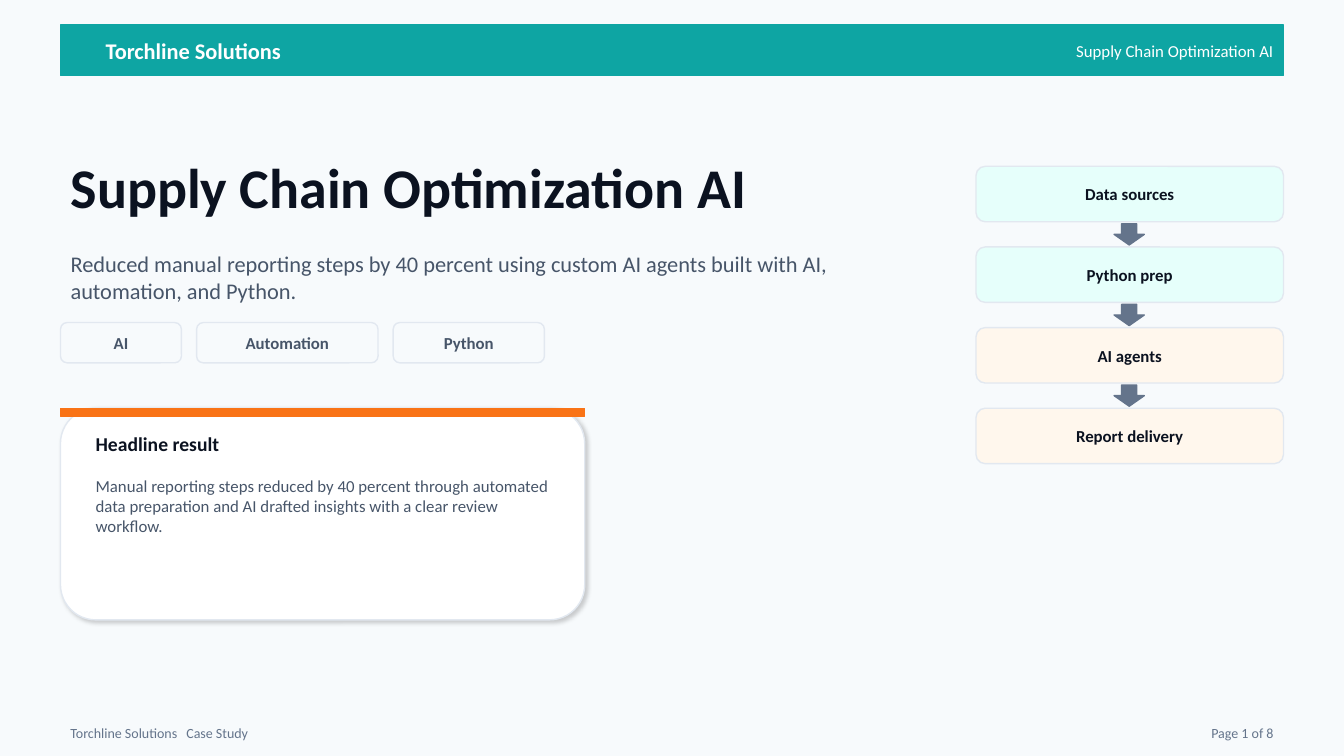
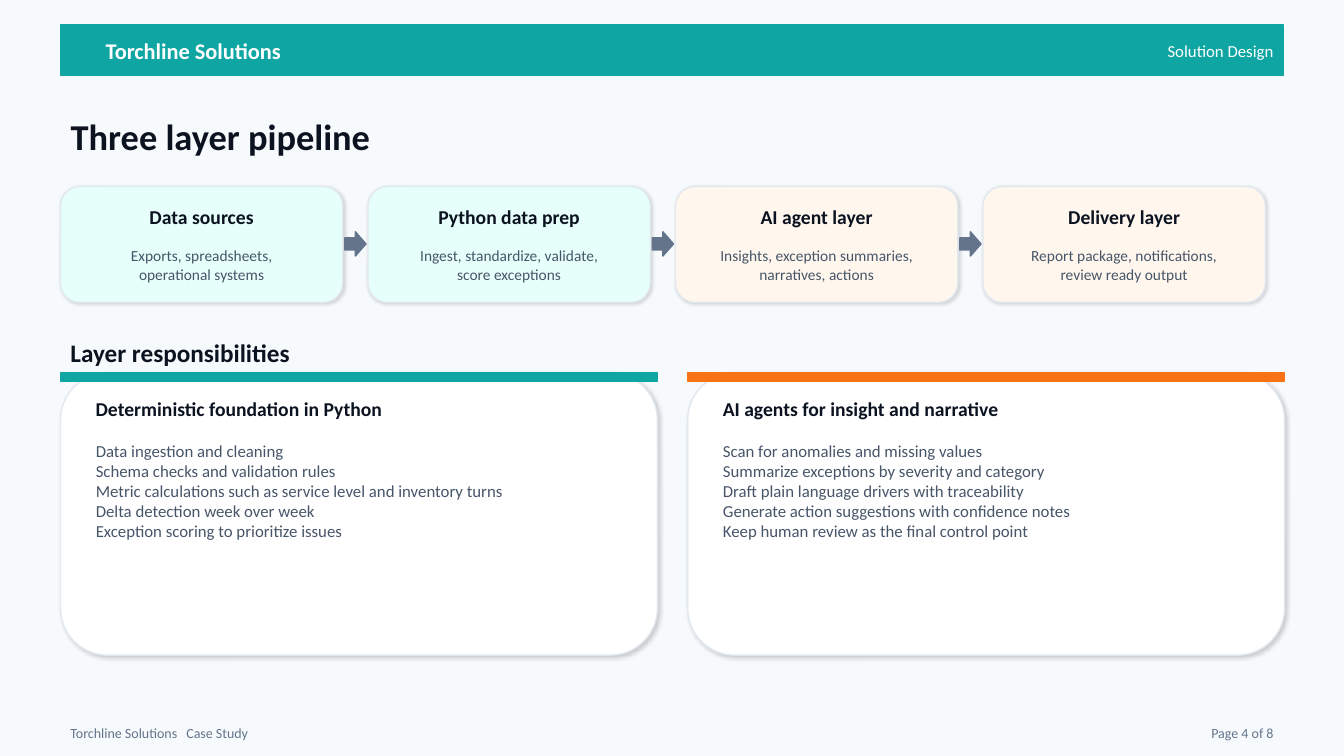
import lxml.etree
import pptx
import pptx.dml.color
import pptx.enum.shapes
import pptx.enum.text
import pptx.oxml.ns
import pptx.util

PX = 9144
LEFT, WIDTH = 60, 1213
RIGHT = LEFT + WIDTH
qn = pptx.oxml.ns.qn
rgb = pptx.dml.color.RGBColor.from_string
SHAPE = pptx.enum.shapes.MSO_SHAPE
ALIGN = pptx.enum.text.PP_ALIGN
ANCHOR = pptx.enum.text.MSO_ANCHOR


class Theme:
    font = "Calibri"
    page = rgb("F7FAFC")
    white = rgb("FFFFFF")
    teal = rgb("0EA5A3")
    orange = rgb("F97316")
    mint = rgb("E6FFFB")
    cream = rgb("FFF7ED")
    border = rgb("E2E8F0")
    ink = rgb("0B1220")
    body = rgb("475569")
    muted = rgb("64748B")
    cover_size = 40
    title_size = 26
    section_size = 18
    lead_size = 16
    heading_size = 14
    body_size = 12
    detail_size = 11
    footer_size = 10
    card_shadow = dict(alpha=18, blur=3, distance=1.5)
    step_shadow = dict(alpha=14, blur=2.5, distance=1.2)


def draw(slide, kind, box, fill, line=None, shadow=None):
    shape = slide.shapes.add_shape(kind, *(n * PX for n in box))
    shape.fill.solid()
    shape.fill.fore_color.rgb = fill
    shape.line.color.rgb = line or fill
    shape.line.width = pptx.util.Pt(1)
    shape.shadow.inherit = False
    if shadow:
        effects = shape.element.spPr.find(qn("a:effectLst"))
        outer = lxml.etree.SubElement(
            effects, qn("a:outerShdw"),
            blurRad=str(pptx.util.Pt(shadow["blur"])),
            dist=str(pptx.util.Pt(shadow["distance"])),
            dir=str(45 * 60000), algn="bl", rotWithShape="0")
        colour = lxml.etree.SubElement(outer, qn("a:srgbClr"), val="000000")
        lxml.etree.SubElement(colour, qn("a:alpha"), val=str(shadow["alpha"] * 1000))
    return shape


def write(slide, text, box, holder=None, size=Theme.body_size, colour=Theme.body,
          bold=False, align=ALIGN.LEFT, anchor=ANCHOR.MIDDLE, tab=None):
    box = [n * PX for n in box]
    shape = holder or slide.shapes.add_textbox(*box)
    shape.left, shape.top, shape.width, shape.height = box
    shape.element.getparent().append(shape.element)
    frame = shape.text_frame
    frame.text = text
    frame.word_wrap = True
    frame.auto_size = pptx.enum.text.MSO_AUTO_SIZE.NONE
    frame.vertical_anchor = anchor
    for paragraph in frame.paragraphs:
        paragraph.alignment = align
        paragraph.space_before = pptx.util.Pt(0)
        paragraph.font.name = Theme.font
        paragraph.font.size = pptx.util.Pt(size)
        paragraph.font.bold = bold
        paragraph.font.color.rgb = colour
        for run in paragraph.runs:
            run.font.name = Theme.font
            run.font.size = pptx.util.Pt(size)
            run.font.bold = bold
            run.font.color.rgb = colour
        properties = paragraph._p.get_or_add_pPr()
        if shape.is_placeholder:
            properties.set("marL", "0")
            properties.set("indent", "0")
            bullet = lxml.etree.Element(qn("a:buNone"))
            properties.find(qn("a:spcBef")).addnext(bullet)
        if tab:
            stops = lxml.etree.Element(qn("a:tabLst"))
            lxml.etree.SubElement(stops, qn("a:tab"), pos=str(tab * PX), algn="l")
            properties.find(qn("a:spcBef")).addnext(stops)


presentation = pptx.Presentation()
presentation.slide_width = 1333 * PX
presentation.slide_height = 750 * PX
background = presentation.slide_master.background.fill
background.solid()
background.fore_color.rgb = Theme.page

cover = presentation.slides.add_slide(presentation.slide_layouts[0])
design = presentation.slides.add_slide(presentation.slide_layouts[3])

for slide, topic, page in [
    (cover, "Supply Chain Optimization AI", 1),
    (design, "Solution Design", 4),
]:
    draw(slide, SHAPE.RECTANGLE, (LEFT, 25, WIDTH, 50), Theme.teal)
    write(slide, "Torchline Solutions", (95, 33, 650, 35),
          size=Theme.lead_size, colour=Theme.white, bold=True)
    write(slide, topic, (RIGHT - 450, 33, 450, 35), colour=Theme.white, align=ALIGN.RIGHT)
    write(slide, "Torchline Solutions\tCase Study", (LEFT, 715, 650, 25),
          size=Theme.footer_size, colour=Theme.muted, tab=115)
    write(slide, f"Page {page} of 8", (RIGHT - 250, 715, 250, 25),
          size=Theme.footer_size, colour=Theme.muted, align=ALIGN.RIGHT)

write(cover, "Supply Chain Optimization AI", (LEFT, 140, 810, 90),
      holder=cover.shapes.title, size=Theme.cover_size, colour=Theme.ink, bold=True)
write(cover, "Reduced manual reporting steps by 40 percent using custom AI agents "
      "built with AI, automation, and Python.", (LEFT, 235, 820, 80),
      holder=cover.placeholders[1], size=Theme.lead_size)

tag_left = LEFT
for label, width in [("AI", 120), ("Automation", 180), ("Python", 150)]:
    box = (tag_left, 320, width, 40)
    tag = draw(cover, SHAPE.ROUNDED_RECTANGLE, box, Theme.page, Theme.border)
    write(cover, label, box, holder=tag, bold=True, align=ALIGN.CENTER)
    tag_left += width + 15

flow_width, flow_height, flow_pitch = 305, 55, 80
flow_left = RIGHT - flow_width
flow = [
    ("Data sources", Theme.mint),
    ("Python prep", Theme.mint),
    ("AI agents", Theme.cream),
    ("Report delivery", Theme.cream),
]
for index, (label, fill) in enumerate(flow):
    top = 165 + index * flow_pitch
    box = (flow_left, top, flow_width, flow_height)
    stage = draw(cover, SHAPE.ROUNDED_RECTANGLE, box, fill, Theme.border)
    write(cover, label, box, holder=stage, colour=Theme.ink, bold=True, align=ALIGN.CENTER)
    if index < len(flow) - 1:
        draw(cover, SHAPE.DOWN_ARROW,
             (flow_left + (flow_width - 30) // 2, top + flow_height + 2, 30, 21), Theme.muted)

write(design, "Three layer pipeline", (LEFT, 110, WIDTH, 50),
      holder=design.shapes.title, size=Theme.title_size, colour=Theme.ink, bold=True)
write(design, "Layer responsibilities", (LEFT, 330, WIDTH, 40),
      size=Theme.section_size, colour=Theme.ink, bold=True)

step_top, step_width, step_height, step_pitch = 185, 280, 115, 305
steps = [
    ("Data sources", "Exports, spreadsheets, operational systems", Theme.mint),
    ("Python data prep", "Ingest, standardize, validate, score exceptions", Theme.mint),
    ("AI agent layer", "Insights, exception summaries, narratives, actions", Theme.cream),
    ("Delivery layer", "Report package, notifications, review ready output", Theme.cream),
]
for index, (heading, detail, fill) in enumerate(steps):
    left = LEFT + index * step_pitch
    draw(design, SHAPE.ROUNDED_RECTANGLE, (left, step_top, step_width, step_height),
         fill, Theme.border, Theme.step_shadow)
    write(design, heading, (left + 20, step_top + 15, step_width - 40, 30),
          size=Theme.heading_size, colour=Theme.ink, bold=True, align=ALIGN.CENTER)
    write(design, detail, (left + 25, step_top + 48, step_width - 50, 60),
          size=Theme.detail_size, align=ALIGN.CENTER)
    if index < len(steps) - 1:
        draw(design, SHAPE.RIGHT_ARROW,
             (left + step_width + 2, step_top + (step_height - 24) // 2, 21, 24), Theme.muted)

panel_width, panel_gap = 592, 30
cards = [
    (cover, None, (LEFT, 405, 520, 210), Theme.orange, "Headline result",
     "Manual reporting steps reduced by 40 percent through automated data preparation "
     "and AI drafted insights with a clear review workflow."),
    (design, design.placeholders[1], (LEFT, 370, panel_width, 280), Theme.teal,
     "Deterministic foundation in Python",
     "Data ingestion and cleaning\n"
     "Schema checks and validation rules\n"
     "Metric calculations such as service level and inventory turns\n"
     "Delta detection week over week\n"
     "Exception scoring to prioritize issues"),
    (design, design.placeholders[2],
     (LEFT + panel_width + panel_gap, 370, panel_width, 280), Theme.orange,
     "AI agents for insight and narrative",
     "Scan for anomalies and missing values\n"
     "Summarize exceptions by severity and category\n"
     "Draft plain language drivers with traceability\n"
     "Generate action suggestions with confidence notes\n"
     "Keep human review as the final control point"),
]
for slide, holder, box, accent, heading, content in cards:
    left, top, width, height = box
    draw(slide, SHAPE.ROUNDED_RECTANGLE, box, Theme.white, Theme.border, Theme.card_shadow)
    draw(slide, SHAPE.RECTANGLE, (left, top, width, 8), accent)
    write(slide, heading, (left + 25, top + 18, width - 50, 35),
          size=Theme.heading_size, colour=Theme.ink, bold=True)
    write(slide, content, (left + 25, top + 62, width - 50, height - 80),
          holder=holder, anchor=ANCHOR.TOP)

presentation.save("out.pptx")
